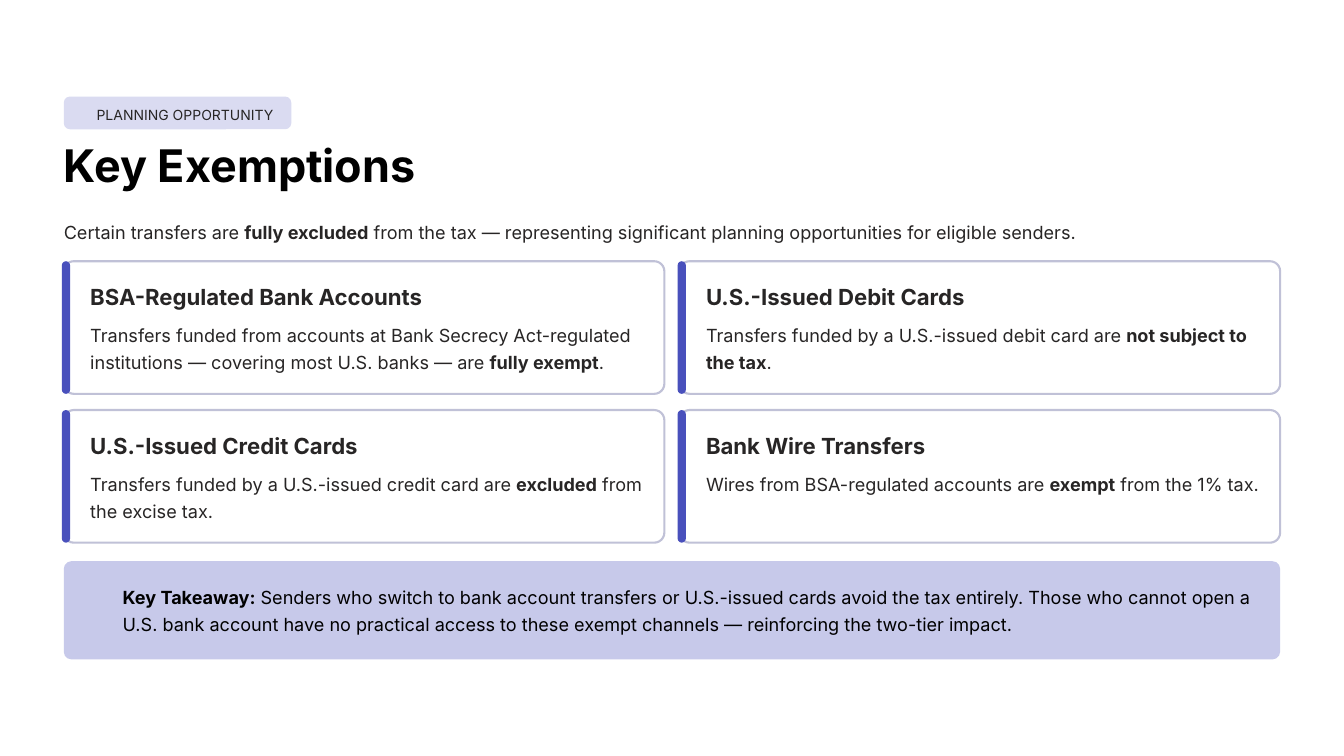
from pptx import Presentation
from pptx.dml.color import RGBColor as Rgb
from pptx.enum.shapes import MSO_SHAPE as Shape
from pptx.util import Cm, Pt

TAG = "PLANNING OPPORTUNITY"
TITLE = "Key Exemptions"
INTRO = ("Certain transfers are **fully excluded** from the tax — representing "
         "significant planning opportunities for eligible senders.")
CARDS = [
    ("BSA-Regulated Bank Accounts",
     "Transfers funded from accounts at Bank Secrecy Act-regulated institutions — "
     "covering most U.S. banks — are **fully exempt**."),
    ("U.S.-Issued Debit Cards",
     "Transfers funded by a U.S.-issued debit card are **not subject to the tax**."),
    ("U.S.-Issued Credit Cards",
     "Transfers funded by a U.S.-issued credit card are **excluded** from the excise tax."),
    ("Bank Wire Transfers",
     "Wires from BSA-regulated accounts are **exempt** from the 1% tax."),
]
TAKEAWAY = ("**Key Takeaway:** Senders who switch to bank account transfers or "
            "U.S.-issued cards avoid the tax entirely. Those who cannot open a U.S. bank "
            "account have no practical access to these exempt channels — reinforcing "
            "the two-tier impact.")

COLORS = {"ink": "272525", "black": "000000", "white": "FFFFFF", "tag": "DADBF1",
          "edge": "C0C1D7", "bar": "4950BC", "note": "C7C9EA"}
FONT = "Inter"
LEFT, WIDTH = 1.93, 36.78
TOP, CARD_W, CARD_H = 7.9, 18.16, 4.01
STEP_X, STEP_Y = WIDTH - CARD_W, 4.5


def add_box(slide, x, y, w, h, fill, radius, edge=None):
    box = slide.shapes.add_shape(Shape.ROUNDED_RECTANGLE, Cm(x), Cm(y), Cm(w), Cm(h))
    box.adjustments[0] = radius
    box.shadow.inherit = False
    box.fill.solid()
    box.fill.fore_color.rgb = Rgb.from_string(COLORS[fill])
    if edge:
        box.line.color.rgb = Rgb.from_string(COLORS[edge])
        box.line.width = Pt(1.8)
    else:
        box.line.fill.background()


def add_text(slide, x, y, w, h, text, size=15.5, lead=23, color="ink",
             bold=False, wrap=False):
    frame = slide.shapes.add_textbox(Cm(x), Cm(y), Cm(w), Cm(h)).text_frame
    frame.margin_left = frame.margin_right = frame.margin_top = frame.margin_bottom = 0
    frame.word_wrap = wrap
    para = frame.paragraphs[0]
    para.line_spacing = Pt(lead)
    para.font.name = FONT
    para.font.size = Pt(size)
    para.font.bold = bold
    para.font.color.rgb = Rgb.from_string(COLORS[color])
    for i, part in enumerate(text.split("**")):
        if part:
            run = para.add_run()
            run.text = part
            if i % 2:
                run.font.bold = True


def add_card(slide, x, y, head, body):
    add_box(slide, x, y, CARD_W, CARD_H, "white", 0.076, "edge")
    add_box(slide, x - 0.06, y, 0.25, CARD_H, "bar", 0.5)
    add_text(slide, x + 0.8, y + 0.62, 10.3, 0.86, head, 19, 24, bold=True)
    add_text(slide, x + 0.8, y + 1.76, 16.74, 1.65, body, wrap=True)


def main():
    deck = Presentation()
    deck.slide_width, deck.slide_height = Cm(40.64), Cm(22.86)
    slide = deck.slides.add_slide(deck.slide_layouts[6])

    add_box(slide, LEFT, 2.92, 6.88, 0.99, "tag", 0.187)
    add_text(slide, 2.92, 3.07, 5.56, 0.66, TAG, 12, 18.5)
    add_text(slide, LEFT, 4.09, 13.74, 1.73, TITLE, 38.5, 48.5, "black", bold=True)
    add_text(slide, LEFT, 6.53, WIDTH, 0.81, INTRO)

    for i, (head, body) in enumerate(CARDS):
        row, col = divmod(i, 2)
        add_card(slide, LEFT + col * STEP_X, TOP + row * STEP_Y, head, body)

    add_box(slide, LEFT, 16.97, WIDTH, 2.97, "note", 0.078)
    add_text(slide, 3.71, 17.58, 34.44, 1.65, TAKEAWAY, color="black", wrap=True)
    deck.save("out.pptx")


if __name__ == "__main__":
    main()
